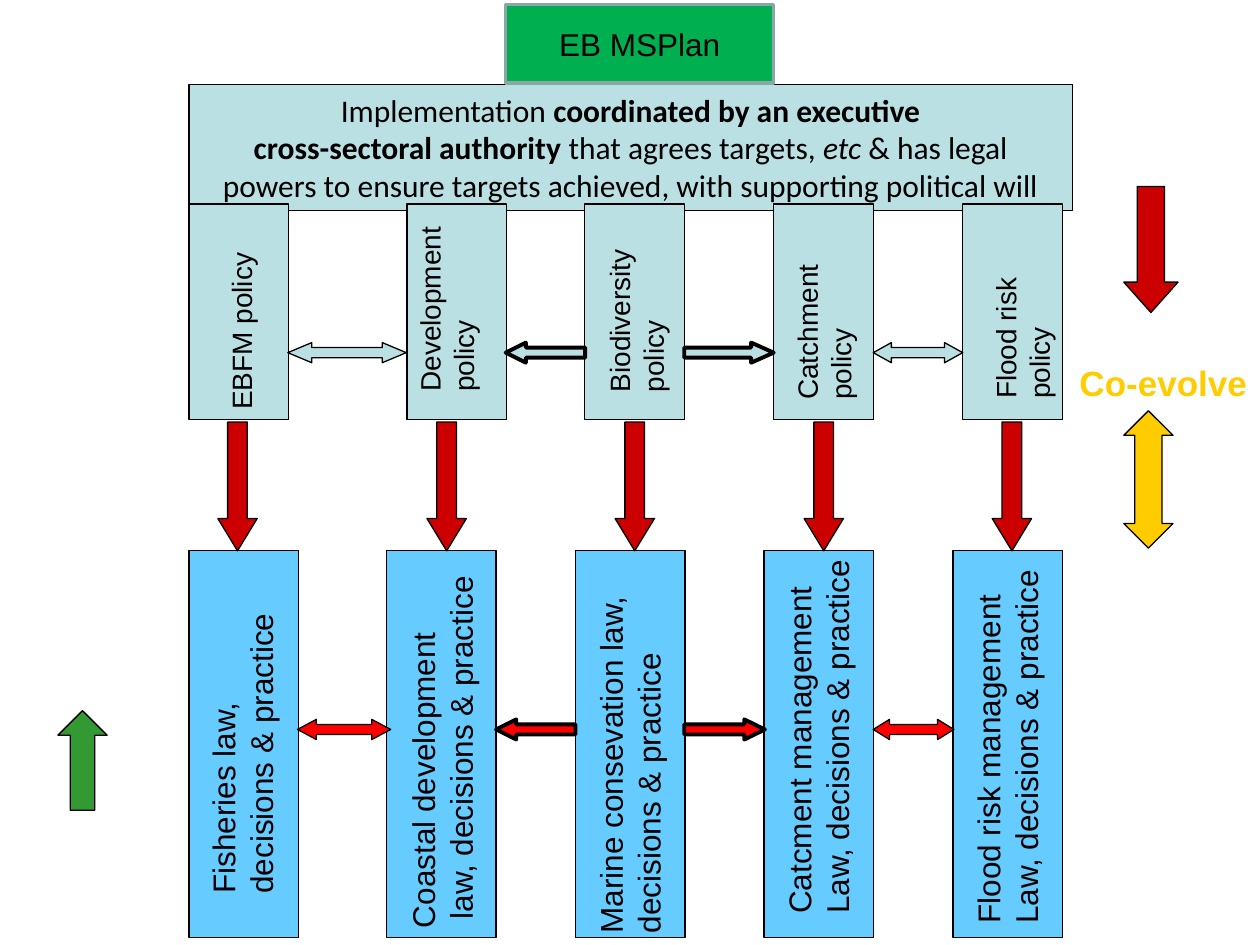
"""Build the slide on coordinating sector policies and practice under one plan."""
from pptx import Presentation
from pptx.dml.color import RGBColor
from pptx.enum.shapes import MSO_SHAPE
from pptx.enum.text import MSO_ANCHOR, MSO_AUTO_SIZE, PP_ALIGN
from pptx.util import Pt

BLACK, PALE, BLUE = "000000", "BBE0E3", "66CCFF"
DARK_RED, RED, GOLD, GREEN = "CC0000", "FF0000", "FFCC00", "339933"

PLAN = [[("EB MSPlan", {})]]
AUTHORITY = [
    [("Implementation ", {}), ("coordinated by an executive", {"bold": True})],
    [("cross-sectoral authority", {"bold": True}), (" that agrees targets, ", {}),
     ("etc", {"italic": True}), (" & has legal", {})],
    [("powers to ensure targets achieved, with supporting political will", {})],
]
PRACTICES = [
    (108, ["Fisheries law,", "decisions & practice"], (49.2, 403.5, 178, 50.4)),
    (221, ["Coastal development", " law, decisions & practice"], (144, 403.9, 216.7, 50.4)),
    (329, ["Marine consevation law,", "decisions & practice"], (253.4, 409, 212.4, 50.4)),
    (436.5, ["Catcment management", "Law, decisions & practice"], (358.6, 395.3, 217.4, 50.4)),
    (544.5, ["Flood risk management", "Law, decisions & practice"], (466.6, 401, 217.4, 50.4)),
]
POLICIES = [
    (108, ["EBFM policy"], (85.7, 175.7, 104.4, 26.6)),
    (232.5, ["Development", "policy"], (200.9, 153.4, 108.7, 46.1)),
    (334, ["Biodiversity", "policy"], (315.4, 159.8, 96.5, 46.1)),
    (442, ["Catchment", "policy"], (424.8, 166.3, 92.2, 46.1)),
    (550, ["Flood risk", "policy"], (527.8, 155.5, 113, 46.1)),
]
ROWS = {
    "practice": (PRACTICES, 314.8, 62.5, 221, BLUE, 18),
    "policy": (POLICIES, 116.6, 57, 123, PALE, 16),
}
DOWN_ARROW_LEFTS = [124.5, 244, 351.5, 459.5, 567]
LINK_ROWS = [
    (195.8, PALE, [("LEFT_RIGHT_ARROW", 164.5, 67.7, 1.19, 0.75),
                   ("LEFT_ARROW", 289, 45.4, 1, 2.25),
                   ("RIGHT_ARROW", 391, 51.1, 1.12, 2.25),
                   ("LEFT_RIGHT_ARROW", 499, 51.1, 0.9, 0.75)]),
    (411.1, RED, [("LEFT_RIGHT_ARROW", 170, 53.3, 0.94, 0.75),
                  ("LEFT_ARROW", 283.5, 45.4, 1, 2.25),
                  ("RIGHT_ARROW", 391, 46.1, 1.02, 2.25),
                  ("LEFT_RIGHT_ARROW", 499, 46.1, 0.81, 0.75)]),
]
SIDE_ARROWS = [
    ("DOWN_ARROW", (642.2, 106.6, 31, 72), 0.56, DARK_RED),
    ("UP_DOWN_ARROW", (642.2, 234.7, 28.1, 78.5), 0.55, GOLD),
    ("UP_ARROW", (33.1, 406.1, 28.1, 56.9), 0.5, GREEN),
]


def color(value):
    return RGBColor.from_string(value)


def add_block(slide, kind, frame, fill, line=BLACK, width=0.75, head=None):
    shape = slide.shapes.add_shape(getattr(MSO_SHAPE, kind), *map(Pt, frame))
    shape.shadow.inherit = False
    shape.fill.solid()
    shape.fill.fore_color.rgb = color(fill)
    shape.line.color.rgb = color(line)
    shape.line.width = Pt(width)
    if head is not None:
        shape.adjustments[0] = 0.5
        shape.adjustments[1] = head
    return shape


def write(shape, lines, size, name="Arial", fill=BLACK, align=PP_ALIGN.LEFT, **frame_format):
    text_frame = shape.text_frame
    for key, value in frame_format.items():
        setattr(text_frame, key, value)
    for index, line in enumerate(lines):
        paragraph = text_frame.paragraphs[0] if index == 0 else text_frame.add_paragraph()
        paragraph.alignment = align
        for text, style in line:
            run = paragraph.add_run()
            run.text = text
            run.font.color.rgb = color(fill)
            for key, value in {"name": name, "size": Pt(size), **style}.items():
                setattr(run.font, key, value)


def add_label(slide, frame, lines, size, rotation=0, fill=BLACK):
    label = slide.shapes.add_textbox(*map(Pt, frame))
    label.rotation = rotation
    write(label, lines, size, fill=fill, word_wrap=False,
          auto_size=MSO_AUTO_SIZE.SHAPE_TO_FIT_TEXT)


def add_row(slide, sectors, top, width, height, fill, size):
    for left, _, _ in sectors:
        add_block(slide, "RECTANGLE", (left, top, width, height), fill)
    for _, texts, frame in sectors:
        add_label(slide, frame, [[(text, {})] for text in texts], size, rotation=270)


def main():
    presentation = Presentation()
    presentation.slide_width, presentation.slide_height = Pt(720), Pt(540)
    slide = presentation.slides.add_slide(presentation.slide_layouts[6])
    centred = {"align": PP_ALIGN.CENTER, "vertical_anchor": MSO_ANCHOR.MIDDLE}

    add_row(slide, *ROWS["practice"])
    authority = add_block(slide, "RECTANGLE", (108, 48.2, 504.7, 72), PALE)
    write(authority, AUTHORITY, 18, "Calibri", word_wrap=False, **centred)
    add_row(slide, *ROWS["policy"])

    for top, fill, links in LINK_ROWS:
        for kind, left, width, head, line_width in links:
            add_block(slide, kind, (left, top, width, 11.5), fill, width=line_width, head=head)
    for left in DOWN_ARROW_LEFTS:
        add_block(slide, "DOWN_ARROW", (left, 241.2, 22.5, 73.6), DARK_RED, head=0.82)

    plan = add_block(slide, "RECTANGLE", (289, 2.7, 153, 44.8), "00B050", "8AA6A8", 2)
    write(plan, PLAN, 18, word_wrap=True, **centred)
    for kind, frame, head, fill in SIDE_ARROWS:
        add_block(slide, kind, frame, fill, head=head)
    add_label(slide, (609.8, 203, 110.2, 31), [[("Co-evolve", {"bold": True})]], 20, fill=GOLD)

    presentation.save("out.pptx")


if __name__ == "__main__":
    main()
